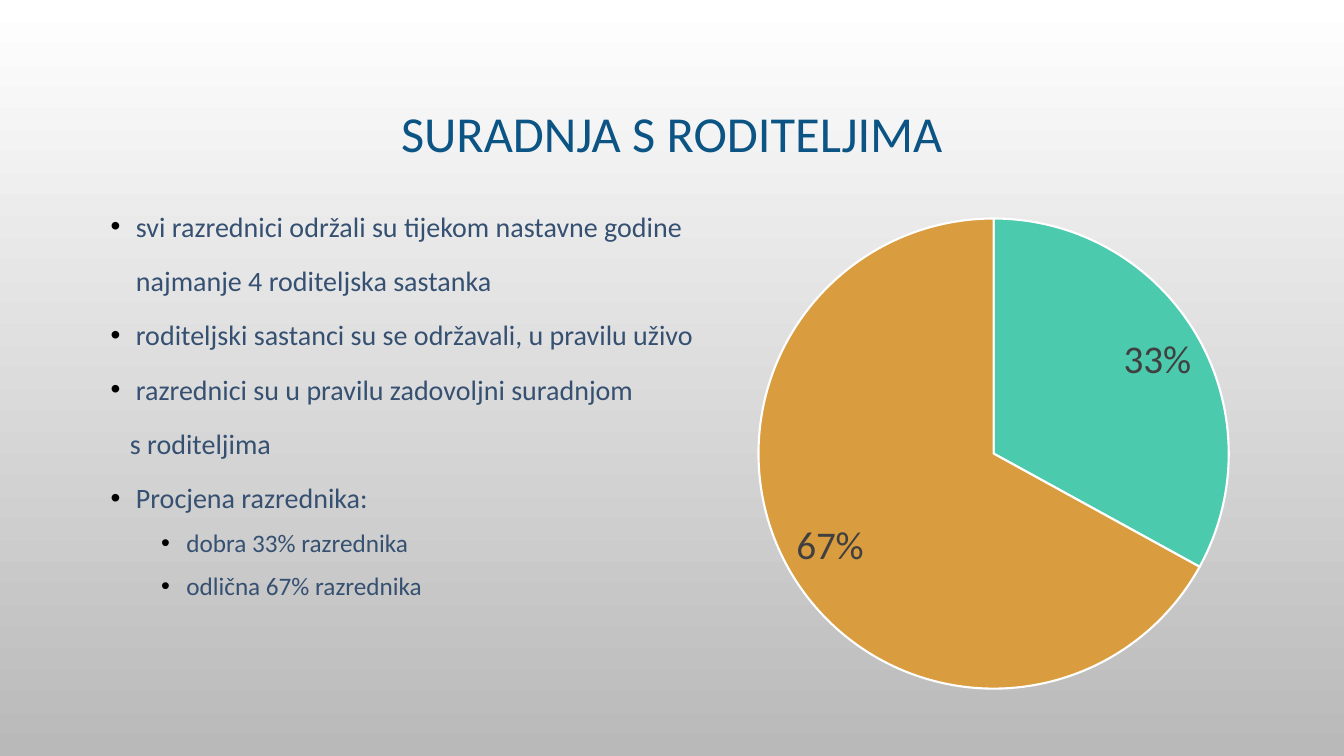
from pptx import Presentation
from pptx.chart.data import CategoryChartData
from pptx.dml.color import RGBColor
from pptx.enum.chart import XL_CHART_TYPE, XL_LABEL_POSITION
from pptx.enum.text import MSO_ANCHOR, PP_ALIGN
from pptx.oxml import parse_xml
from pptx.oxml.ns import nsdecls
from pptx.util import Inches, Pt

FONT = "Calibri"
TITLE = "SURADNJA S RODITELJIMA"
# text, bulleted, left indent in inches, size, space before
POINTS = [
    ("svi razrednici održali su tijekom nastavne godine", True, 0.25, 20, 0),
    ("najmanje 4 roditeljska sastanka", False, 0.25, 20, 10),
    ("roditeljski sastanci su se održavali, u pravilu uživo", True, 0.25, 20, 10),
    ("razrednici su u pravilu zadovoljni suradnjom", True, 0.25, 20, 10),
    ("s roditeljima", False, 0.19, 20, 10),
    ("Procjena razrednika:", True, 0.25, 20, 10),
    ("dobra 33% razrednika", True, 0.75, 18, 5),
    ("odlična 67% razrednika", True, 0.75, 18, 5),
]
RATINGS = [("1", 0.33, "4BCAAD"), ("2", 0.67, "D99C3F")]
BACKGROUND = ("FFFFFF", "B9B9B9")

WIDTH, HEIGHT = 13.33, 7.5
MARGIN = 1
HANG = 0.25


def color(hex_code):
    return RGBColor.from_string(hex_code)


def inches(*lengths):
    return [Inches(length) for length in lengths]


def add_frame(slide, left, top, width, height, anchor=MSO_ANCHOR.TOP):
    frame = slide.shapes.add_textbox(*inches(left, top, width, height)).text_frame
    frame.word_wrap = True
    frame.vertical_anchor = anchor
    return frame


def write(paragraph, text, size, ink, align=PP_ALIGN.LEFT, spacing=1.0,
          before=0, indent=0, bulleted=False):
    paragraph.alignment = align
    paragraph.line_spacing = spacing
    paragraph.space_before = Pt(before)
    properties = paragraph._p.get_or_add_pPr()
    properties.set("marL", str(Inches(indent)))
    properties.set("indent", str(-Inches(HANG) if bulleted else 0))
    if bulleted:
        for xml in (
            f'<a:buClr {nsdecls("a")}><a:srgbClr val="000000"/></a:buClr>',
            f'<a:buFont {nsdecls("a")} typeface="Arial"/>',
            f'<a:buChar {nsdecls("a")} char="•"/>',
        ):
            properties.append(parse_xml(xml))
    run = paragraph.add_run()
    run.text = text
    run.font.name, run.font.size = FONT, Pt(size)
    run.font.color.rgb = color(ink)


def paint_background(slide):
    fill = slide.background.fill
    fill.gradient()
    fill.gradient_angle = 270
    for stop, position, shade in zip(fill.gradient_stops, (0, 1), BACKGROUND):
        stop.position = position
        stop.color.rgb = color(shade)


def add_ratings_pie(slide, left, top, width, height):
    data = CategoryChartData(number_format="0%")
    data.categories = [name for name, _, _ in RATINGS]
    data.add_series("Procjena", [share for _, share, _ in RATINGS])
    chart = slide.shapes.add_chart(
        XL_CHART_TYPE.PIE, *inches(left, top, width, height), data).chart
    chart.has_title = chart.has_legend = False
    chart.font.name, chart.font.size = FONT, Pt(10)
    plot = chart.plots[0]
    plot.vary_by_categories = True
    for index, (_, _, shade) in enumerate(RATINGS):
        slice_format = plot.series[0].points[index].format
        slice_format.fill.solid()
        slice_format.fill.fore_color.rgb = color(shade)
        slice_format.line.color.rgb = color("FFFFFF")
        slice_format.line.width = Pt(1.5)
    plot.has_data_labels = True
    labels = plot.data_labels
    labels.show_value, labels.show_percentage = True, False
    labels.number_format, labels.number_format_is_linked = "0%", False
    labels.position = XL_LABEL_POSITION.INSIDE_END
    labels.font.name, labels.font.size = FONT, Pt(28)
    labels.font.color.rgb = color("404040")


def main():
    deck = Presentation()
    deck.slide_width, deck.slide_height = inches(WIDTH, HEIGHT)
    slide = deck.slides.add_slide(deck.slide_layouts[6])
    paint_background(slide)

    content_width = WIDTH - 2 * MARGIN
    title = add_frame(slide, MARGIN, 0.68, content_width, 1.35, MSO_ANCHOR.MIDDLE)
    write(title.paragraphs[0], TITLE, 36, "0B5484", PP_ALIGN.CENTER, 0.9)

    body = add_frame(slide, MARGIN, 1.96, content_width, 5.08)
    for index, (text, bulleted, indent, size, before) in enumerate(POINTS):
        paragraph = body.add_paragraph() if index else body.paragraphs[0]
        write(paragraph, text, size, "355071", spacing=1.2, before=before,
              indent=indent, bulleted=bulleted)

    add_ratings_pie(slide, 7.25, 2.03, 5.21, 4.94)
    deck.save("out.pptx")


if __name__ == "__main__":
    main()
